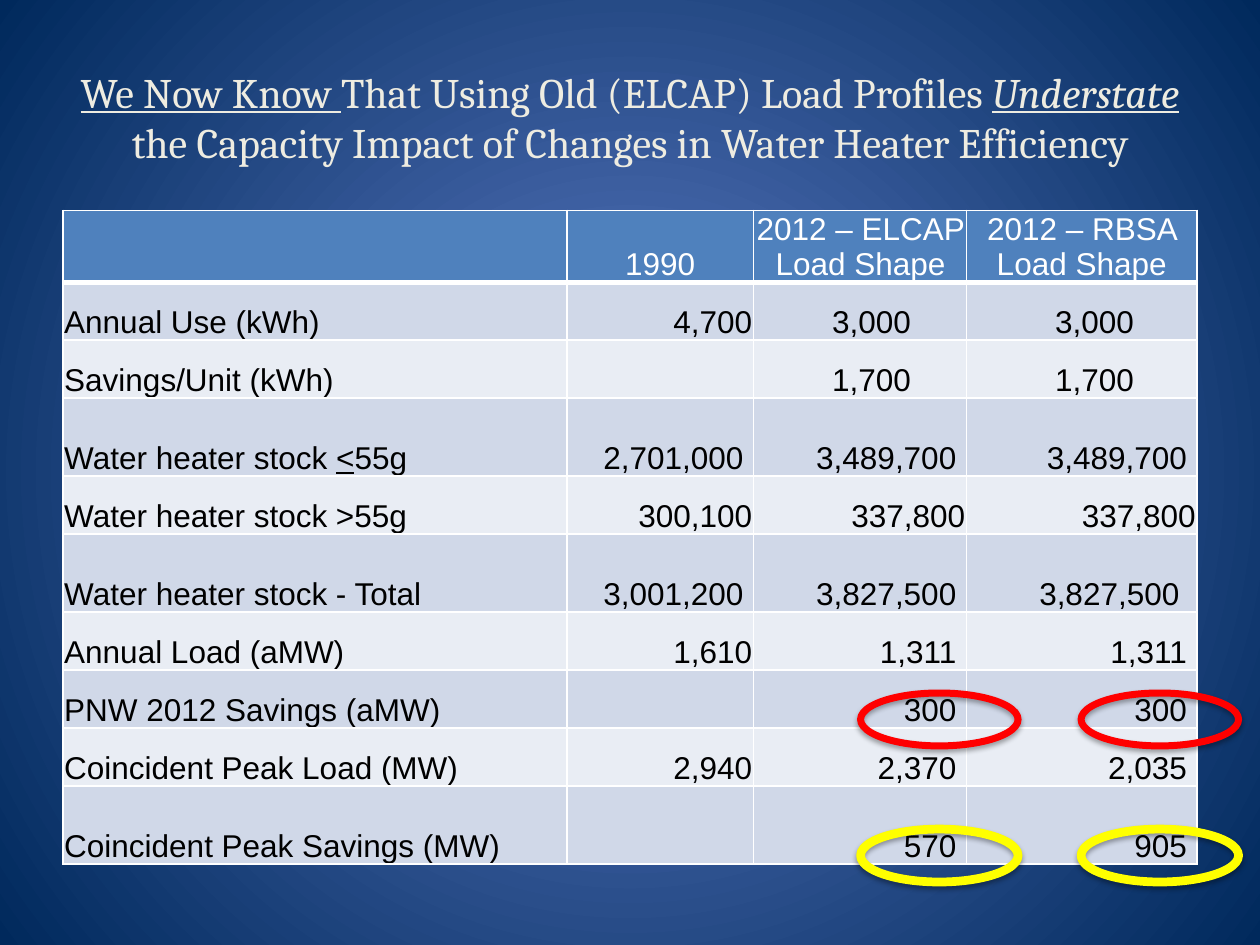
from lxml.etree import SubElement
from pptx import Presentation
from pptx.dml.color import RGBColor
from pptx.enum.shapes import MSO_SHAPE as Shape
from pptx.enum.text import MSO_ANCHOR as Anchor, PP_ALIGN as Align
from pptx.oxml.ns import qn
from pptx.util import Inches, Pt

COLORS = {
    "glow": "5E7CC5", "navy": "00295C", "title": "EEECE1",
    "header": "4F81BD", "band": "D0D8E8", "light": "E9EDF4",
    "white": "FFFFFF", "black": "000000", "red": "FF0000", "yellow": "FFFF00",
}
COLUMN_WIDTHS = [4, 1.48, 1.69, 1.83]
TALL_ROWS = {3, 5, 9}
ROWS = [
    ["", "1990", "2012 – ELCAP Load Shape", "2012 – RBSA Load Shape"],
    ["Annual Use (kWh)", "4,700", "3,000", "3,000"],
    ["Savings/Unit (kWh)", "", "1,700", "1,700"],
    ["Water heater stock <55g", "2,701,000", "3,489,700", "3,489,700"],
    ["Water heater stock >55g", "300,100", "337,800", "337,800"],
    ["Water heater stock - Total", "3,001,200", "3,827,500", "3,827,500"],
    ["Annual Load (aMW)", "1,610", "1,311", "1,311"],
    ["PNW 2012 Savings (aMW)", "", "300", "300"],
    ["Coincident Peak Load (MW)", "2,940", "2,370", "2,035"],
    ["Coincident Peak Savings (MW)", "", "570", "905"],
]
FLUSH, NEAR = 0.01, 0.08
RIGHT_INSETS = {
    1: [FLUSH, 0.44, 0.5],
    2: [FLUSH, 0.44, 0.5],
    3: [NEAR, NEAR, NEAR],
    4: [FLUSH, FLUSH, FLUSH],
    5: [NEAR, NEAR, 0.14],
}
DEFAULT_INSETS = [FLUSH, NEAR, NEAR]


def color(name):
    return RGBColor.from_string(COLORS[name])


def set_font(font, name, size, color_name):
    font.name = name
    font.size = Pt(size)
    font.color.rgb = color(color_name)


def add_element(parent, tag, **attributes):
    return SubElement(parent, qn(tag), {key: str(value) for key, value in attributes.items()})


def paint_background(page):
    fill = page.background.fill
    fill.gradient()
    for stop, name in zip(fill.gradient_stops, ["glow", "navy"]):
        stop.color.rgb = color(name)
    gradient = page.background._cSld.find(".//" + qn("a:gradFill"))
    gradient.remove(gradient.find(qn("a:lin")))
    circle = add_element(gradient, "a:path", path="circle")
    add_element(circle, "a:fillToRect", l=50000, t=50000, r=50000, b=50000)


def write_title(page):
    title = page.shapes.title
    title.left, title.top = Inches(0.5), Inches(0.3)
    title.width, title.height = Inches(9), Inches(1.25)
    title.text_frame.vertical_anchor = Anchor.MIDDLE
    para = title.text_frame.paragraphs[0]
    para.alignment = Align.CENTER
    set_font(para.font, "Cambria", 24, "title")
    for text, underline, italic in [
        ("We Now Know ", True, False),
        ("That Using Old (ELCAP) Load Profiles ", False, False),
        ("Understate ", True, True),
        ("the Capacity Impact of Changes in Water Heater Efficiency", False, False),
    ]:
        span = para.add_run()
        span.text = text
        span.font.underline = underline
        span.font.italic = italic


def draw_borders(cell, bottom):
    properties = cell._tc.get_or_add_tcPr()
    for side, width in [("L", 1), ("R", 1), ("T", 1), ("B", bottom)]:
        line = add_element(properties, "a:ln" + side, w=Pt(width))
        fill = add_element(line, "a:solidFill")
        add_element(fill, "a:srgbClr", val=COLORS["white"])


def write_cell(cell, text, alignment, color_name, right_inset):
    cell.vertical_anchor = Anchor.BOTTOM
    cell.margin_left = cell.margin_top = Inches(0.01)
    cell.margin_right, cell.margin_bottom = Inches(right_inset), 0
    para = cell.text_frame.paragraphs[0]
    para.alignment = alignment
    set_font(para.font, "Arial", 18, color_name)
    before, sign, after = text.partition("<")
    for part in filter(None, [before, sign, after]):
        span = para.add_run()
        span.text = part
        if part == "<":
            span.font.underline = True


def add_load_table(page):
    heights = [0.62 if index in TALL_ROWS else 0.46 for index in range(len(ROWS))]
    frame = page.shapes.add_table(
        len(ROWS), len(COLUMN_WIDTHS), Inches(0.5), Inches(1.67),
        Inches(sum(COLUMN_WIDTHS)), Inches(sum(heights)))
    table = frame.table
    for column, width in zip(table.columns, COLUMN_WIDTHS):
        column.width = Inches(width)
    for row_index, values in enumerate(ROWS):
        table.rows[row_index].height = Inches(heights[row_index])
        is_header = row_index == 0
        shade = "header" if is_header else "band" if row_index % 2 else "light"
        insets = [FLUSH] + RIGHT_INSETS.get(row_index, DEFAULT_INSETS)
        for column_index, text in enumerate(values):
            cell = table.cell(row_index, column_index)
            draw_borders(cell, 3 if is_header else 1)
            cell.fill.solid()
            cell.fill.fore_color.rgb = color(shade)
            if is_header:
                write_cell(cell, text, Align.CENTER, "white", 0 if column_index == 2 else FLUSH)
            else:
                alignment = Align.RIGHT if column_index else Align.LEFT
                write_cell(cell, text, alignment, "black", insets[column_index])


def add_ring(page, left, top, color_name, width):
    ring = page.shapes.add_shape(
        Shape.OVAL, Inches(left), Inches(top), Inches(1.25), Inches(0.42))
    ring.fill.background()
    ring.line.color.rgb = color(color_name)
    ring.line.width = Pt(width)
    ring.shadow.inherit = False
    effects = ring._element.spPr.find(qn("a:effectLst"))
    shadow = add_element(
        effects, "a:outerShdw", blurRad=Pt(3.1), dist=Pt(1.8), dir=5400000, rotWithShape=0)
    tint = add_element(shadow, "a:srgbClr", val=COLORS["black"])
    add_element(tint, "a:alpha", val=35000)


def main():
    deck = Presentation()
    deck.slide_width, deck.slide_height = Inches(10), Inches(7.5)
    page = deck.slides.add_slide(deck.slide_layouts[5])
    paint_background(page)
    write_title(page)
    add_load_table(page)
    for top, color_name, width in [(5.5, "red", 4), (6.58, "yellow", 5)]:
        for left in [6.83, 8.58]:
            add_ring(page, left, top, color_name, width)
    deck.save("out.pptx")


if __name__ == "__main__":
    main()
